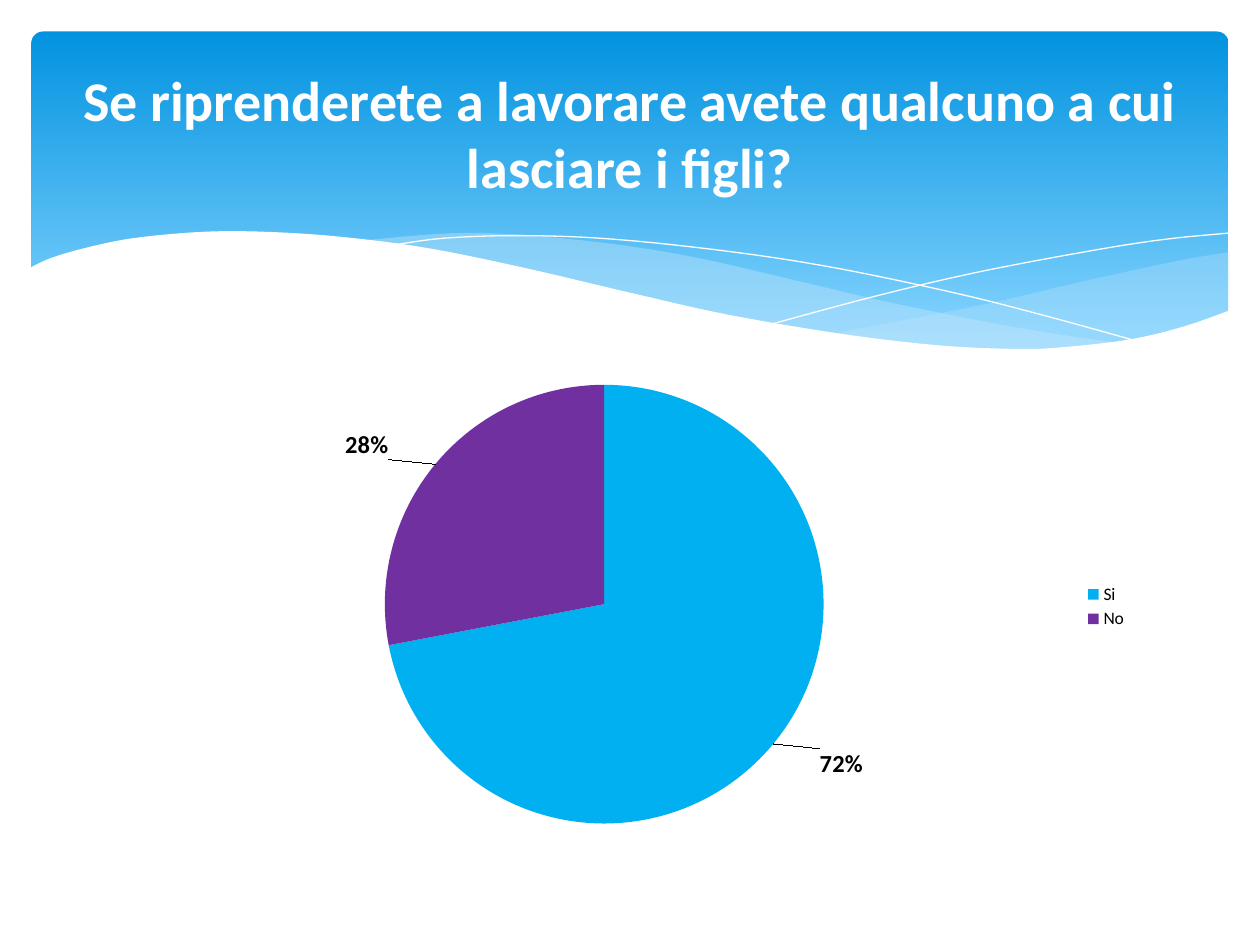
from lxml.etree import SubElement
from pptx import Presentation
from pptx.chart.data import CategoryChartData
from pptx.dml.color import RGBColor
from pptx.enum.chart import XL_CHART_TYPE, XL_LABEL_POSITION, XL_LEGEND_POSITION
from pptx.enum.shapes import MSO_SHAPE
from pptx.enum.text import MSO_ANCHOR, PP_ALIGN
from pptx.oxml import parse_xml
from pptx.oxml.ns import nsdecls, qn
from pptx.util import Cm, Pt

HUES = {"white": "FFFFFF", "black": "000000", "deep": "0293E0", "pale": "83D3FE",
        "mist": "C6E7FC", "yes": "00B0F0", "no": "7030A0"}
FONT = "Calibri"

RIGHT = [[(9.76, 2), (9.35, 2.07), (8.61, 2.23), (7.79, 2.42), (6.61, 2.65)],
         [(6.61, 2.65), (7.19, 2.72), (7.69, 2.77), (8.14, 2.78), (8.63, 2.75),
          (9.13, 2.67), (9.49, 2.57), (9.76, 2.47)]]
LEFT = [[(8.93, 2.73), (8.07, 2.6), (7.06, 2.4), (6.29, 2.22), (5.55, 2.05),
         (4.89, 1.94), (4.2, 1.87), (3.61, 1.85), (2.86, 1.91)],
        [(2.86, 1.91), (3.62, 2.03), (4.49, 2.22), (5.3, 2.4), (6.01, 2.55),
         (6.8, 2.68), (7.48, 2.76), (8.07, 2.78), (8.57, 2.77), (8.93, 2.73)]]
FALL = [[(3.09, 1.95), (3.53, 1.89), (4.16, 1.87), (4.89, 1.9), (5.82, 2),
         (6.65, 2.13), (7.6, 2.33), (8.31, 2.51), (9.07, 2.72)]]
RISE = [[(6.13, 2.57), (6.95, 2.35), (7.76, 2.16), (8.66, 1.99), (9.24, 1.9), (9.75, 1.85)]]
BASE = [[(9.77, 2.46), (9.4, 2.59), (8.99, 2.69), (8.5, 2.75), (8.09, 2.77),
         (7.44, 2.74), (6.68, 2.65), (5.79, 2.5), (5.03, 2.33), (4.18, 2.13),
         (3.4, 1.97), (2.71, 1.88), (2.11, 1.84), (1.61, 1.84), (1.06, 1.89),
         (0.67, 1.97), (0.4, 2.05), (0.23, 2.13)],
        [(0.23, 3.29), (9.77, 3.29)]]


def tint(name):
    """Return the named colour."""
    return RGBColor.from_string(HUES[name])


def smooth(knots, steps=6):
    """Return points on a Catmull-Rom curve through the knots."""
    if len(knots) < 3:
        return knots
    ends = [knots[0], *knots, knots[-1]]
    out = []
    for a, b, c, d in zip(ends, ends[1:], ends[2:], ends[3:]):
        for t in (i / steps for i in range(steps)):
            out.append(tuple(
                q + t / 2 * (r - p + t * (2 * p - 5 * q + 4 * r - s + t * (3 * (q - r) + s - p)))
                for p, q, r, s in zip(a, b, c, d)))
    return out + [knots[-1]]


def wave(slide, box, parts, fill=None, alpha=None):
    """Draw a filled wave, or a white hairline when no fill is given."""
    left, top, width, _ = box
    unit = width / 10
    (x, y), *rest = [(Cm(left + u * unit), Cm(top + v * unit))
                     for part in parts for u, v in smooth(part)]
    pen = slide.shapes.build_freeform(x, y)
    pen.add_line_segments(rest, close=bool(fill))
    shape = pen.convert_to_shape()
    shape.shadow.inherit = False
    if fill:
        shape.fill.solid()
        shape.fill.fore_color.rgb = tint(fill)
        shape.line.fill.background()
    else:
        shape.fill.background()
        shape.line.color.rgb = tint("white")
        shape.line.width = Pt(0)
    if alpha:
        hue = shape._element.spPr.find(qn("a:solidFill"))[0]
        SubElement(hue, qn("a:alpha"), val=str(alpha * 1000))


def banner(slide, box):
    """Draw the blue panel and its waves."""
    left, top, width, _ = box
    edge = width / 40
    panel = slide.shapes.add_shape(MSO_SHAPE.ROUNDED_RECTANGLE, Cm(left + edge), Cm(top + edge),
                                   Cm(width - 2 * edge), Cm(6.86))
    panel.adjustments[0] = 0.034
    panel.shadow.inherit = False
    panel.line.fill.background()
    panel.fill.gradient()
    panel.fill.gradient_angle = 270
    for stop, spot, name in zip(panel.fill.gradient_stops, (0, 0.9), ("deep", "pale")):
        stop.position = spot
        stop.color.rgb = tint(name)
    wave(slide, box, RIGHT, "mist", 29)
    wave(slide, box, LEFT, "mist", 40)
    wave(slide, box, FALL)
    wave(slide, box, RISE)
    wave(slide, box, BASE, "white")


def title(slide, box, text):
    """Place the title over the banner."""
    head = slide.shapes.title
    slide.shapes._spTree.append(head._element)
    head.left, head.top, head.width, head.height = map(Cm, box)
    frame = head.text_frame
    frame.word_wrap = True
    frame.vertical_anchor = MSO_ANCHOR.MIDDLE
    para = frame.paragraphs[0]
    para.alignment = PP_ALIGN.CENTER
    run = para.add_run()
    run.text = text
    font = run.font
    font.name, font.size, font.bold = FONT, Pt(32), True
    font.color.rgb = tint("white")


def layout(**sizes):
    """Return a manual chart layout."""
    tags = "".join(f'<c:{key} val="{val}"/>' for key, val in sizes.items())
    return parse_xml(f'<c:layout {nsdecls("c")}><c:manualLayout>{tags}'
                     '</c:manualLayout></c:layout>')


def style(font, size, bold=False):
    """Set a chart font."""
    font.name, font.size, font.bold = FONT, Pt(size), bold
    font.color.rgb = tint("black")


def pie(slide, box, shares):
    """Place the pie chart with its legend and labels."""
    data = CategoryChartData()
    data.categories = [name for name, _, _ in shares]
    data.add_series("Series 1", [val for _, val, _ in shares])
    chart = slide.shapes.add_chart(XL_CHART_TYPE.PIE, *map(Cm, box), data).chart
    style(chart.font, 10)
    chart.has_title = False
    chart.has_legend = True
    chart.legend.position = XL_LEGEND_POSITION.RIGHT
    chart.legend.include_in_layout = False
    plot = chart.plots[0]
    plot.vary_by_categories = True
    area = chart._chartSpace.chart.plotArea
    for old in area.findall(qn("c:layout")):
        area.remove(old)
    area.insert(0, layout(layoutTarget="inner", xMode="edge", yMode="edge",
                          x=0.26, y=0.03, w=0.43, h=0.93))
    row = plot.series[0]
    labels = row.data_labels
    style(labels.font, 14, True)
    labels.show_value = False
    labels.show_percentage = True
    labels.show_legend_key = False
    labels.position = XL_LABEL_POSITION.OUTSIDE_END
    tree = labels._element
    lead = tree.find(qn("c:showLeaderLines"))
    if lead is None:
        lead = SubElement(tree, qn("c:showLeaderLines"))
    lead.set("val", "1")
    for i, (_, _, name) in enumerate(shares):
        point = row.points[i]
        point.format.fill.solid()
        point.format.fill.fore_color.rgb = tint(name)
        style(point.data_label.font, 14, True)
        point.data_label.position = XL_LABEL_POSITION.OUTSIDE_END
        label = tree.findall(qn("c:dLbl"))[i]
        label.find(qn("c:showVal")).set("val", "0")
        label.find(qn("c:showPercent")).set("val", "1")
        label.insert(1, layout(x=-0.04 if i else 0.04, y=0))


def main():
    """Build and save the slide."""
    deck = Presentation()
    deck.slide_width, deck.slide_height = Cm(25.4), Cm(19.05)
    slide = deck.slides.add_slide(deck.slide_layouts[5])
    banner(slide, (0, 0, 25.4, 8.36))
    title(slide, (1.27, 0.94, 22.86, 3.48),
          "Se riprenderete a lavorare avete qualcuno a cui lasciare i figli?")
    pie(slide, (2.41, 7.44, 20.57, 9.58), [("Si", 72, "yes"), ("No", 28, "no")])
    deck.save("out.pptx")


if __name__ == "__main__":
    main()
